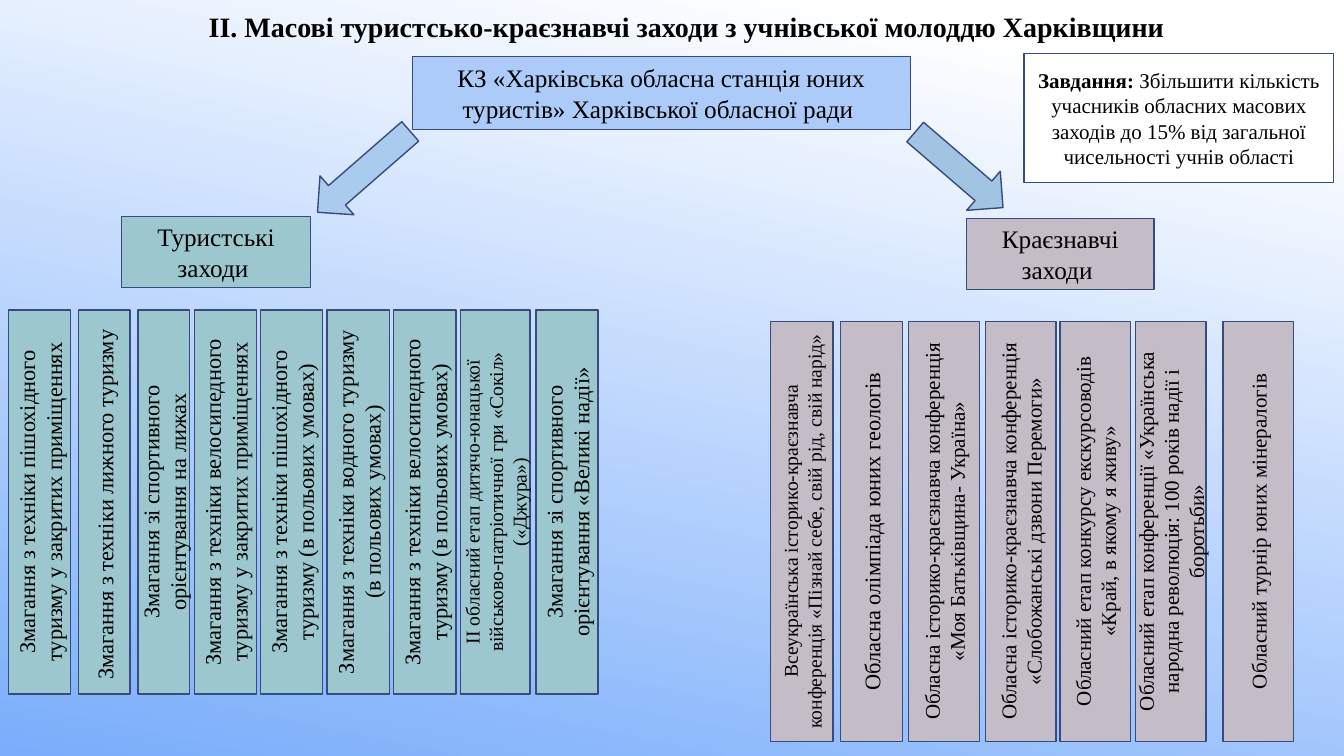
from dataclasses import dataclass

from pptx import Presentation
from pptx import util as u
from pptx.dml.color import RGBColor
from pptx.enum import shapes, text

FONT = "Times New Roman"
BLACK = RGBColor(0x00, 0x00, 0x00)
WHITE = RGBColor(0xFF, 0xFF, 0xFF)
SKY = RGBColor(0x79, 0xAD, 0xFB)
NAVY = RGBColor(0x37, 0x4B, 0x7F)
BLUE = RGBColor(0xAC, 0xCB, 0xF9)
TEAL = RGBColor(0x9C, 0xC7, 0xCE)
MAUVE = RGBColor(0xC4, 0xBC, 0xC6)
LEFT_ARROW = RGBColor(0xA9, 0xCC, 0xEE)
RIGHT_ARROW = RGBColor(0xA1, 0xC4, 0xE3)


@dataclass
class Box:
    left: float
    top: float
    width: float
    height: float
    fill: RGBColor
    label: str = ""
    size: float = 18
    rotation: float = 0
    lead: str = ""
    kind: shapes.MSO_SHAPE = shapes.MSO_SHAPE.RECTANGLE


@dataclass
class Bar:
    center: float
    thickness: float
    size: float
    label: str


@dataclass
class Group:
    middle: float
    length: float
    fill: RGBColor
    bars: list[Bar]


BOXES = [
    Box(10.39, 1.42, 12.55, 1.85, BLUE,
        "КЗ «Харківська обласна станція юних туристів» Харківської обласної ради "),
    Box(3.07, 5.46, 4.75, 1.78, TEAL, "Туристські заходи "),
    Box(24.36, 5.51, 4.72, 1.78, MAUVE, "Краєзнавчі заходи "),
    Box(7.62, 3.68, 3.1, 1.3, LEFT_ARROW, rotation=138.9,
        kind=shapes.MSO_SHAPE.RIGHT_ARROW),
    Box(22.71, 3.63, 2.92, 1.3, RIGHT_ARROW, rotation=40.7,
        kind=shapes.MSO_SHAPE.RIGHT_ARROW),
    Box(25.81, 1.35, 7.8, 3.25, WHITE,
        " Збільшити кількість учасників обласних масових заходів до 15% "
        "від загальної чисельності учнів області", 15, lead="Завдання:"),
]

GROUPS = [
    Group(12.65, 9.68, TEAL, [
        Bar(1, 1.57, 16, "Змагання з техніки пішохідного туризму у закритих приміщеннях"),
        Bar(2.63, 1.3, 16, "Змагання з техніки лижного туризму "),
        Bar(4.13, 1.3, 16, "Змагання зі спортивного орієнтування на лижах"),
        Bar(5.68, 1.57, 16, "Змагання з техніки велосипедного туризму у закритих приміщеннях"),
        Bar(7.35, 1.57, 16, "Змагання з техніки пішохідного туризму (в польових умовах)"),
        Bar(9.03, 1.57, 16, "Змагання з техніки водного туризму (в польових умовах)"),
        Bar(10.71, 1.57, 16, "Змагання з техніки велосипедного туризму (в польових умовах)"),
        Bar(12.48, 1.75, 14, "ІІ обласний етап дитячо-юнацької військово-патріотичної "
                             "гри «Сокіл» («Джура»)"),
        Bar(14.29, 1.57, 16, "Змагання зі спортивного орієнтування «Великі надії»"),
    ]),
    Group(13.39, 10.59, MAUVE, [
        Bar(20.21, 1.57, 14, "Всеукраїнська історико-краєзнавча конференція "
                             "«Пізнай себе, свій рід, свій нарід»"),
        Bar(21.96, 1.57, 16, "Обласна олімпіада юних геологів"),
        Bar(23.79, 1.78, 15, "Обласна історико-краєзнавча конференція "
                             "«Моя Батьківщина- Україна»"),
        Bar(25.72, 1.78, 15, "Обласна історико-краєзнавча конференція "
                             "«Слобожанські дзвони Перемоги»"),
        Bar(27.6, 1.78, 15, "Обласний етап конкурсу екскурсоводів «Край, в якому я живу»"),
        Bar(29.5, 1.78, 15, "Обласний етап конференції «Українська народна революція: "
                            "100 років надії і боротьби»"),
        Bar(31.71, 1.78, 15, "Обласний турнір юних мінералогів"),
    ]),
]


def write(sp, label: str, size: float, lead: str = ""):
    tf = sp.text_frame
    tf.word_wrap = True
    tf.vertical_anchor = text.MSO_ANCHOR.MIDDLE
    p = tf.paragraphs[0]
    p.alignment = text.PP_ALIGN.CENTER
    p.font.name = FONT
    p.font.size = u.Pt(size)
    p.font.color.rgb = BLACK
    if lead:
        r = p.add_run()
        r.text = lead
        r.font.bold = True
    p.add_run().text = label
    return p


def draw_box(s, box: Box) -> None:
    sp = s.shapes.add_shape(box.kind, u.Cm(box.left), u.Cm(box.top),
                            u.Cm(box.width), u.Cm(box.height))
    sp.rotation = box.rotation
    sp.shadow.inherit = False
    sp.fill.solid()
    sp.fill.fore_color.rgb = box.fill
    sp.line.color.rgb = NAVY
    sp.line.width = u.Pt(1)
    if box.label:
        write(sp, box.label, box.size, box.lead)


def draw_group(s, group: Group) -> None:
    for bar in group.bars:
        draw_box(s, Box(bar.center - group.length / 2, group.middle - bar.thickness / 2,
                        group.length, bar.thickness, group.fill,
                        bar.label, bar.size, rotation=270))


def draw_title(s) -> None:
    sp = s.shapes.add_textbox(u.Cm(3.07), u.Cm(0), u.Cm(28.47), u.Cm(1.42))
    p = write(sp, "ІІ. Масові туристсько-краєзнавчі заходи з учнівської "
                  "молоддю Харківщини", 20)
    p.font.bold = True
    p.line_spacing = 0.9


def paint_background(s) -> None:
    fill = s.background.fill
    fill.gradient()
    fill.gradient_angle = 258
    for stop, position, color in zip(fill.gradient_stops, (0.1, 1), (WHITE, SKY)):
        stop.position = position
        stop.color.rgb = color


def main() -> None:
    prs = Presentation()
    prs.slide_width, prs.slide_height = u.Cm(33.87), u.Cm(19.05)
    s = prs.slides.add_slide(prs.slide_layouts[6])
    paint_background(s)
    draw_title(s)
    for box in BOXES:
        draw_box(s, box)
    for group in GROUPS:
        draw_group(s, group)
    prs.save("out.pptx")


if __name__ == "__main__":
    main()
